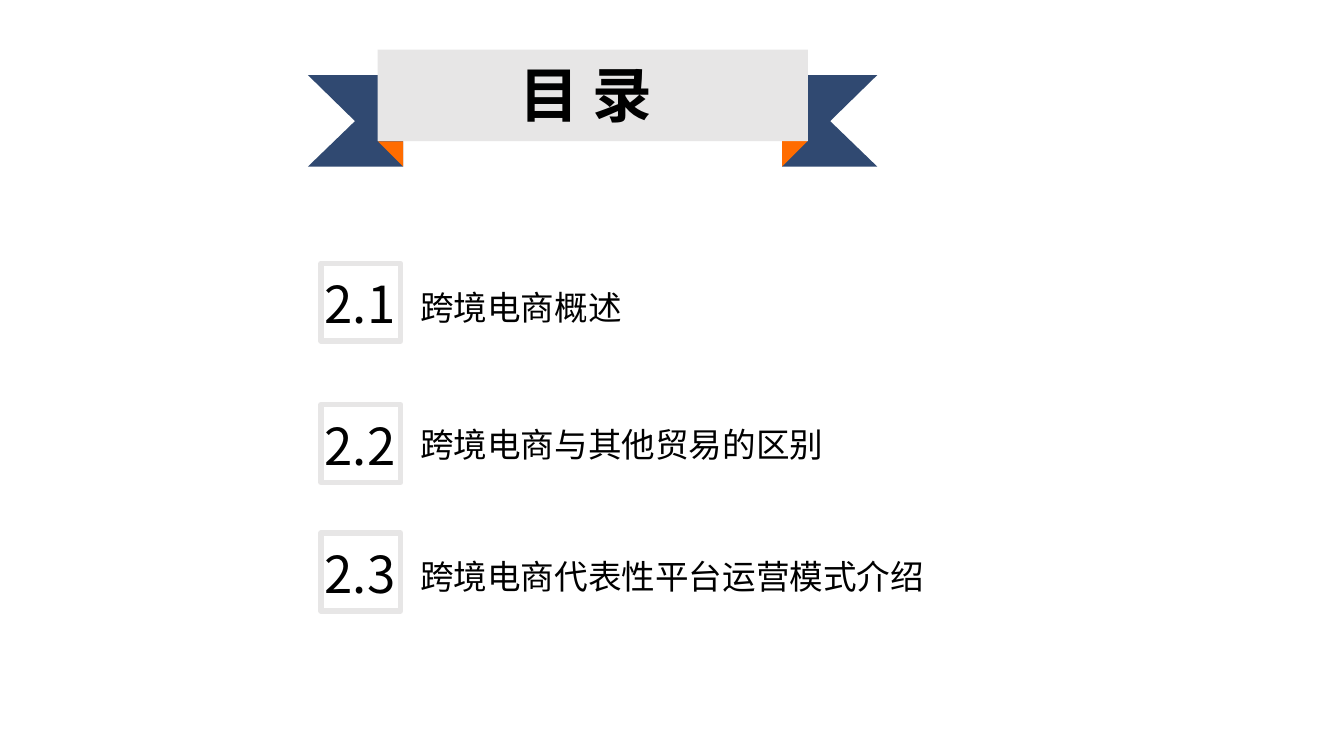
"""Build the contents slide with a ribbon title and three numbered sections."""
import pptx
import pptx.dml.color
import pptx.enum.shapes
import pptx.enum.text
import pptx.oxml
import pptx.oxml.ns
import pptx.util
from pptx.util import Cm

COLORS = {"navy": "304971", "orange": "FF6C00", "grey": "E7E6E6", "black": "000000"}
FONT = "Noto Sans CJK SC"
SHAPES = pptx.enum.shapes.MSO_SHAPE
ALIGN = pptx.enum.text.PP_ALIGN


def paint(shape, color):
    shape.shadow.inherit = False
    shape.fill.solid()
    shape.fill.fore_color.rgb = pptx.dml.color.RGBColor.from_string(COLORS[color])
    shape.line.fill.background()


def write(parent, box, text, size, align, wrap=True, inset=0.18, bold=False):
    frame = parent.add_textbox(*map(Cm, box)).text_frame
    frame.word_wrap = wrap
    frame.auto_size = pptx.enum.text.MSO_AUTO_SIZE.SHAPE_TO_FIT_TEXT
    frame.margin_left, frame.margin_right = Cm(inset), Cm(0.18)
    frame.margin_top = frame.margin_bottom = Cm(0.1)
    paragraph = frame.paragraphs[0]
    paragraph.text = text
    paragraph.alignment = align
    font = paragraph.runs[0].font
    font.name, font.size, font.bold = FONT, pptx.util.Pt(size), bold
    font.color.rgb = pptx.dml.color.RGBColor.from_string(COLORS["black"])
    east_asian = pptx.oxml.parse_xml(
        f'<a:ea {pptx.oxml.ns.nsdecls("a")} typeface="{FONT}"/>')
    paragraph.runs[0].font._element.append(east_asian)


deck = pptx.Presentation()
deck.slide_width, deck.slide_height = Cm(25.4), Cm(14.29)
slide = deck.slides.add_slide(deck.slide_layouts[6])

ribbon = slide.shapes.add_group_shape().shapes
ribbon_center = 11.2
tail_points = [(5.38, 1.42), (3.58, 1.42), (3.58, 3.15), (5.38, 3.15), (4.49, 2.29)]
for side, fold_left, fold_turn in [(-1, 7.14, 180), (1, 14.78, 90)]:
    outline = [(Cm(ribbon_center + side * x), Cm(y)) for x, y in tail_points]
    builder = ribbon.build_freeform(*outline[0])
    builder.add_line_segments(outline[1:], close=True)
    paint(builder.convert_to_shape(), "navy")
    fold = ribbon.add_shape(
        SHAPES.RIGHT_TRIANGLE, Cm(fold_left), Cm(2.67), Cm(0.48), Cm(0.48))
    fold.rotation = fold_turn
    paint(fold, "orange")
banner = ribbon.add_shape(SHAPES.RECTANGLE, Cm(7.14), Cm(0.94), Cm(8.13), Cm(1.73))
paint(banner, "grey")
write(slide.shapes, (7.77, 0.99, 6.6, 1.63), "目 录", 32, ALIGN.CENTER, bold=True)

sections = [
    ("2.1", 4.98, "跨境电商概述", 5.33, 8.61, True),
    ("2.2", 7.65, "跨境电商与其他贸易的区别", 7.92, 9.22, True),
    ("2.3", 10.08, "跨境电商代表性平台运营模式介绍", 10.41, 10.21, False),
]
for number, frame_top, heading, heading_top, heading_width, wrap in sections:
    badge = slide.shapes.add_group_shape().shapes
    square = badge.add_shape(
        SHAPES.RECTANGLE, Cm(6.07), Cm(frame_top), Cm(1.5), Cm(1.47))
    square.shadow.inherit = False
    square.fill.background()
    square.line.color.rgb = pptx.dml.color.RGBColor.from_string(COLORS["grey"])
    square.line.width = pptx.util.Pt(3)
    write(badge, (5.89, frame_top + 0.08, 1.83, 1.35), number, 27.3,
          ALIGN.CENTER, wrap=False)
    write(slide.shapes, (7.62, heading_top, heading_width, 0.97), heading, 18,
          ALIGN.LEFT, wrap=wrap, inset=0.32)

deck.save("out.pptx")
